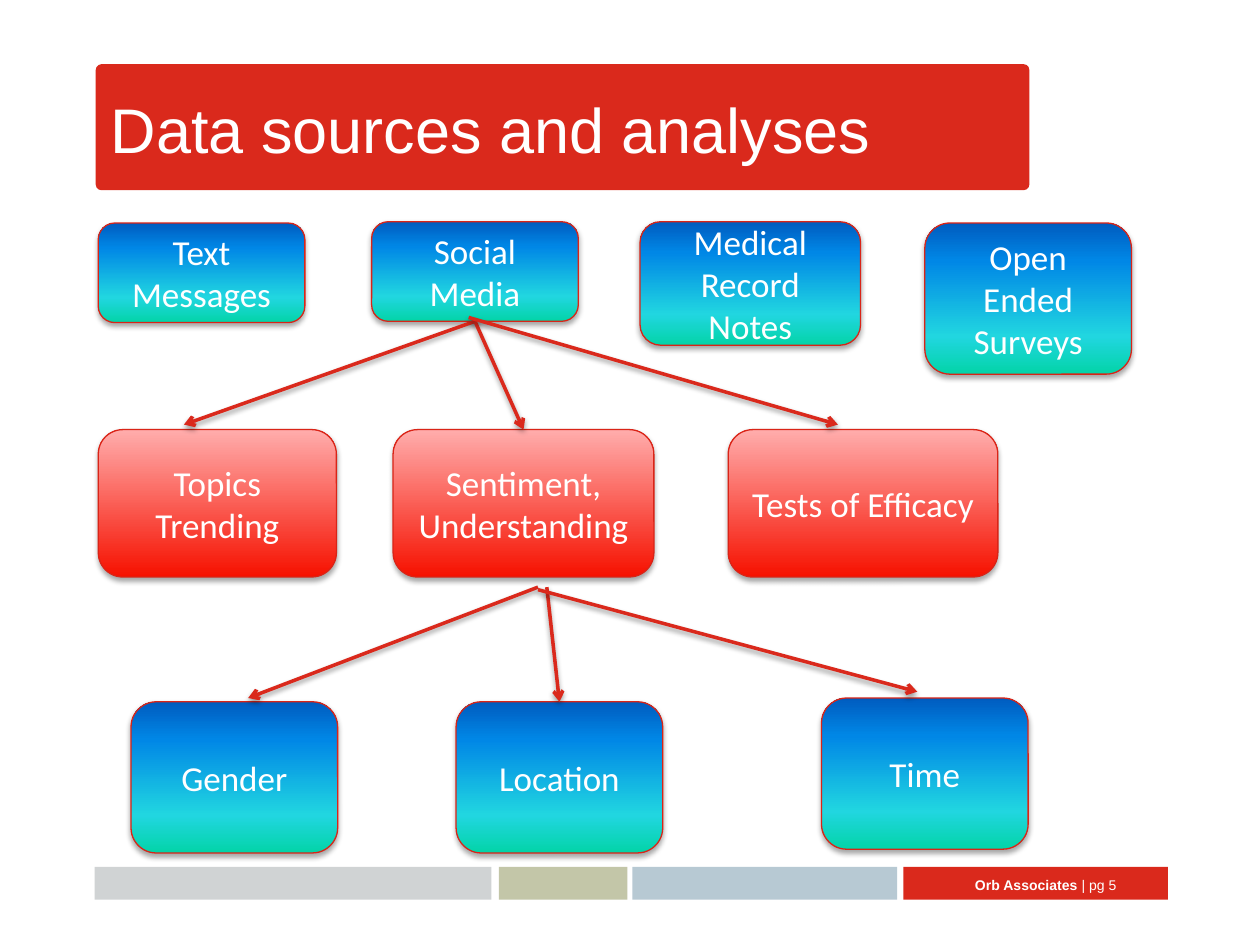
from lxml.etree import SubElement
from pptx import Presentation
from pptx.dml.color import RGBColor
from pptx.enum.shapes import MSO_CONNECTOR, MSO_SHAPE
from pptx.enum.text import MSO_ANCHOR, PP_ALIGN
from pptx.oxml.ns import qn
from pptx.util import Inches, Pt

RED = RGBColor(0xDA, 0x29, 0x1C)
OUTLINE = RGBColor(0xDA, 0x24, 0x17)
WHITE = RGBColor(0xFF, 0xFF, 0xFF)
BLACK = RGBColor(0x00, 0x00, 0x00)
GREY = RGBColor(0xD0, 0xD3, 0xD4)
OLIVE = RGBColor(0xC3, 0xC6, 0xA8)
PALE_BLUE = RGBColor(0xB7, 0xC9, 0xD3)
# Gradient stops run from the bottom of a box to its top
OCEAN = [
    (0, RGBColor(0x03, 0xD4, 0xA8)),
    (25, RGBColor(0x21, 0xD6, 0xE0)),
    (75, RGBColor(0x00, 0x87, 0xE6)),
    (100, RGBColor(0x00, 0x5C, 0xBF)),
]
FLAME = [(0, RGBColor(0xF6, 0x11, 0x00)), (100, RGBColor(0xFF, 0xAD, 0xAC))]


def add_color(parent, color, alpha=None):
    """Append an a:srgbClr, with its opacity in percent."""
    element = SubElement(parent, qn("a:srgbClr"), val=str(color))
    if alpha is not None:
        SubElement(element, qn("a:alpha"), val=str(alpha * 1000))


def add_shadow(properties, distance, alpha):
    """Give a shape or connector a soft shadow straight below it."""
    effects = properties.find(qn("a:effectLst"))
    if effects is None:
        effects = SubElement(properties, qn("a:effectLst"))
    shadow = SubElement(effects, qn("a:outerShdw"), blurRad=str(Pt(3.1)),
                        dist=str(Pt(distance)), dir="5400000", rotWithShape="0")
    add_color(shadow, BLACK, alpha)


prs = Presentation()
prs.slide_width, prs.slide_height = Inches(10), Inches(7.5)
slide = prs.slides.add_slide(prs.slide_layouts[5])
shapes = slide.shapes

# Title banner and footer bars
bars = [
    (0.76, 0.51, 7.41, 1, 0.045, RED),
    (0.75, 6.88, 3.15, 0.26, 0, GREY),
    (3.96, 6.88, 1.02, 0.26, 0, OLIVE),
    (5.02, 6.88, 2.1, 0.26, 0, PALE_BLUE),
    (7.17, 6.88, 2.1, 0.26, 0, RED),
]
for left, top, width, height, rounding, color in bars:
    bar = shapes.add_shape(MSO_SHAPE.ROUNDED_RECTANGLE, Inches(left), Inches(top),
                           Inches(width), Inches(height))
    bar.adjustments[0] = rounding
    bar.fill.solid()
    bar.fill.fore_color.rgb = color
    bar.line.fill.background()
    bar.shadow.inherit = False

footer = shapes.add_textbox(Inches(6.63), Inches(6.82), Inches(2.33), Inches(0.4))
footer.text_frame.word_wrap = True
footer.text_frame.vertical_anchor = MSO_ANCHOR.MIDDLE
credit = footer.text_frame.paragraphs[0]
credit.alignment = PP_ALIGN.RIGHT
credit.font.size = Pt(8)
credit.font.name = "Arial"
credit.font.color.rgb = WHITE
company = credit.add_run()
company.text = "Orb Associates "
company.font.bold = True
credit.add_run().text = "| pg 5"

title = shapes.title
title.left, title.top = Inches(0.78), Inches(0.51)
title.width, title.height = Inches(7.38), Inches(1.01)
title.text_frame.text = "Data sources and analyses"
title.text_frame.vertical_anchor = MSO_ANCHOR.MIDDLE
heading = title.text_frame.paragraphs[0]
heading.alignment = PP_ALIGN.LEFT
heading.font.size = Pt(36)
heading.font.name = "Arial"
heading.font.color.rgb = WHITE
title.element.getparent().append(title.element)  # in front of the banner

# Data sources, analyses and breakdowns
boxes = [
    ("Text Messages", 0.78, 1.77, 1.64, 0.79, OCEAN),
    ("Social Media", 2.95, 1.76, 1.64, 0.79, OCEAN),
    ("Medical Record Notes", 5.08, 1.76, 1.75, 0.98, OCEAN),
    ("Open\nEnded\nSurveys", 7.34, 1.77, 1.64, 1.2, OCEAN),
    ("Topics Trending", 0.78, 3.41, 1.89, 1.17, FLAME),
    ("Sentiment, Understanding", 3.12, 3.41, 2.07, 1.17, FLAME),
    ("Tests of Efficacy", 5.78, 3.41, 2.14, 1.17, FLAME),
    ("Gender", 1.04, 5.57, 1.64, 1.2, OCEAN),
    ("Location", 3.62, 5.57, 1.64, 1.2, OCEAN),
    ("Time", 6.52, 5.54, 1.64, 1.2, OCEAN),
]
box_by_label = {}
for label, left, top, width, height, stops in boxes:
    box = shapes.add_shape(MSO_SHAPE.ROUNDED_RECTANGLE, Inches(left), Inches(top),
                           Inches(width), Inches(height))
    box_by_label[label] = box
    box.fill.gradient()
    box.fill.gradient_angle = 90
    stop_list = box.element.spPr.find(qn("a:gradFill")).find(qn("a:gsLst"))
    for old_stop in list(stop_list):
        stop_list.remove(old_stop)
    for position, color in stops:
        add_color(SubElement(stop_list, qn("a:gs"), pos=str(position * 1000)), color)
    box.line.color.rgb = OUTLINE
    box.line.width = Pt(0.75)
    box.shadow.inherit = False
    add_shadow(box.element.spPr, 1.8, 35)
    box.text_frame.word_wrap = True
    box.text_frame.vertical_anchor = MSO_ANCHOR.MIDDLE
    box.text_frame.text = label
    for paragraph in box.text_frame.paragraphs:
        paragraph.alignment = PP_ALIGN.CENTER
        paragraph.font.size = Pt(20)
        paragraph.font.name = "Calibri"
        paragraph.font.color.rgb = WHITE

# Arrows: start, end, box joined at its bottom, box joined at its top
arrows = [
    ((3.77, 2.55), (1.46, 3.37), "Social Media", None),
    ((3.77, 2.55), (4.15, 3.41), "Social Media", "Sentiment, Understanding"),
    ((3.72, 2.52), (6.65, 3.37), None, None),
    ((4.27, 4.66), (1.97, 5.54), None, None),
    ((4.34, 4.66), (4.44, 5.57), None, "Location"),
    ((4.27, 4.68), (7.28, 5.49), None, None),
]
for start, end, source, target in arrows:
    arrow = shapes.add_connector(MSO_CONNECTOR.STRAIGHT, Inches(start[0]), Inches(start[1]),
                                 Inches(end[0]), Inches(end[1]))
    if source:
        arrow.begin_connect(box_by_label[source], 2)
    if target:
        arrow.end_connect(box_by_label[target], 0)
    arrow.line.color.rgb = RED
    arrow.line.width = Pt(2)
    properties = arrow._element.spPr
    SubElement(properties.find(qn("a:ln")), qn("a:tailEnd"), type="arrow")
    add_shadow(properties, 1.6, 38)

prs.save("out.pptx")
